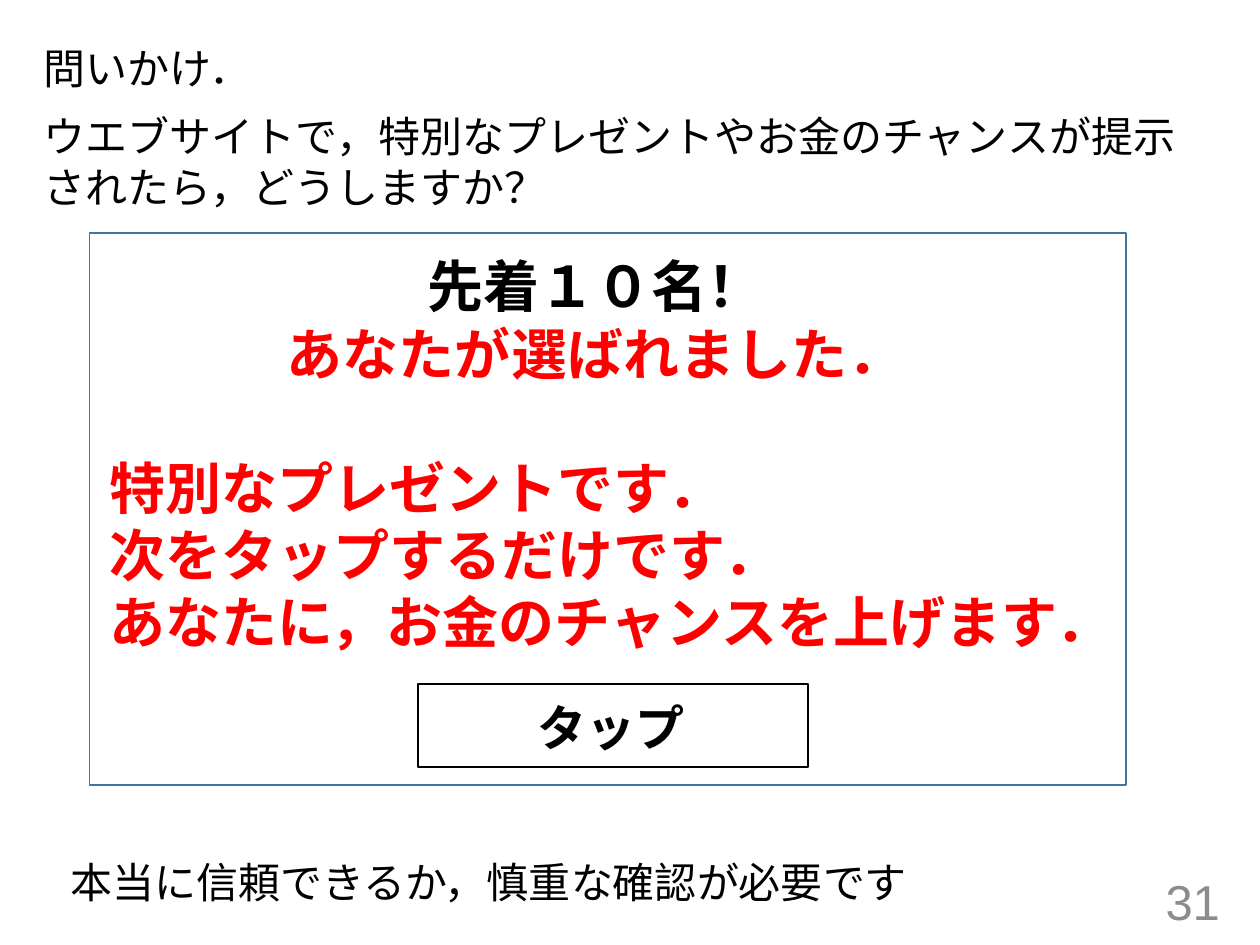
from pptx import Presentation
from pptx.dml.color import RGBColor
from pptx.enum.shapes import MSO_SHAPE
from pptx.enum.text import MSO_ANCHOR, PP_ALIGN
from pptx.util import Inches, Pt

COLORS = {"black": "000000", "red": "FF0000", "gray": "8C8C8C", "blue": "43739E"}

# Content
QUESTION = [
    "問いかけ．",
    "ウエブサイトで，特別なプレゼントやお金のチャンスが提示されたら，どうしますか？",
]
HEADLINES = [("先着１０名！", "black"), ("あなたが選ばれました．", "red")]
OFFERS = [
    "特別なプレゼントです．",
    "次をタップするだけです．",
    "あなたに，お金のチャンスを上げます．",
]
BUTTON = "タップ"
ADVICE = "本当に信頼できるか，慎重な確認が必要です"
PAGE = "31"

# Left, top, width, height
FRAMES = [((0.71, 1.85, 8.23, 4.38), "blue"), ((3.32, 5.43, 3.09, 0.66), "black")]

prs = Presentation()
prs.slide_width, prs.slide_height = Inches(10), Inches(7.5)
s = prs.slides.add_slide(prs.slide_layouts[6])


def rgb(name):
    return RGBColor.from_string(COLORS[name])


def add_box(box, wrap=True, anchor=MSO_ANCHOR.TOP):
    tf = s.shapes.add_textbox(*map(Inches, box)).text_frame
    tf.word_wrap = wrap
    tf.vertical_anchor = anchor
    return tf


def add_text(tf, text, size=24, font="Arial", color="black", bold=False,
             align=PP_ALIGN.LEFT, before=0):
    first = not tf.paragraphs[0].runs
    p = tf.paragraphs[0] if first else tf.add_paragraph()
    p.alignment = align
    if not first:
        p.space_before = Pt(before)
    r = p.add_run()
    r.text = text
    r.font.size, r.font.name, r.font.bold = Pt(size), font, bold
    r.font.color.rgb = rgb(color)


# Question
tf = add_box((0.25, 0.29, 9.25, 1.49))
for line in QUESTION:
    add_text(tf, line, before=10)

# Page number
add_text(add_box((7.53, 6.95, 2.25, 0.4), anchor=MSO_ANCHOR.MIDDLE), PAGE,
         size=28, color="gray", align=PP_ALIGN.RIGHT)

# Pop-up and button outlines
for box, color in FRAMES:
    sp = s.shapes.add_shape(MSO_SHAPE.RECTANGLE, *map(Inches, box))
    sp.shadow.inherit = False
    sp.fill.background()
    sp.line.color.rgb = rgb(color)
    sp.line.width = Pt(1)

# Pop-up message, with a one-line gap above the offers
tf = add_box((0.77, 1.95, 7.91, 3.87))
for line, color in HEADLINES:
    add_text(tf, line, size=32, font="Calibri", color=color, bold=True,
             align=PP_ALIGN.CENTER)
for i, line in enumerate(OFFERS):
    add_text(tf, line, size=32, font="Calibri", color="red", bold=True,
             before=0 if i else 38.4)

# Button label
add_text(add_box((4.17, 5.49, 1.38, 0.57), wrap=False), BUTTON,
         size=28, font="Calibri", bold=True)

# Advice
add_text(add_box((0.46, 6.75, 9.25, 0.8)), ADVICE)

prs.save("out.pptx")
